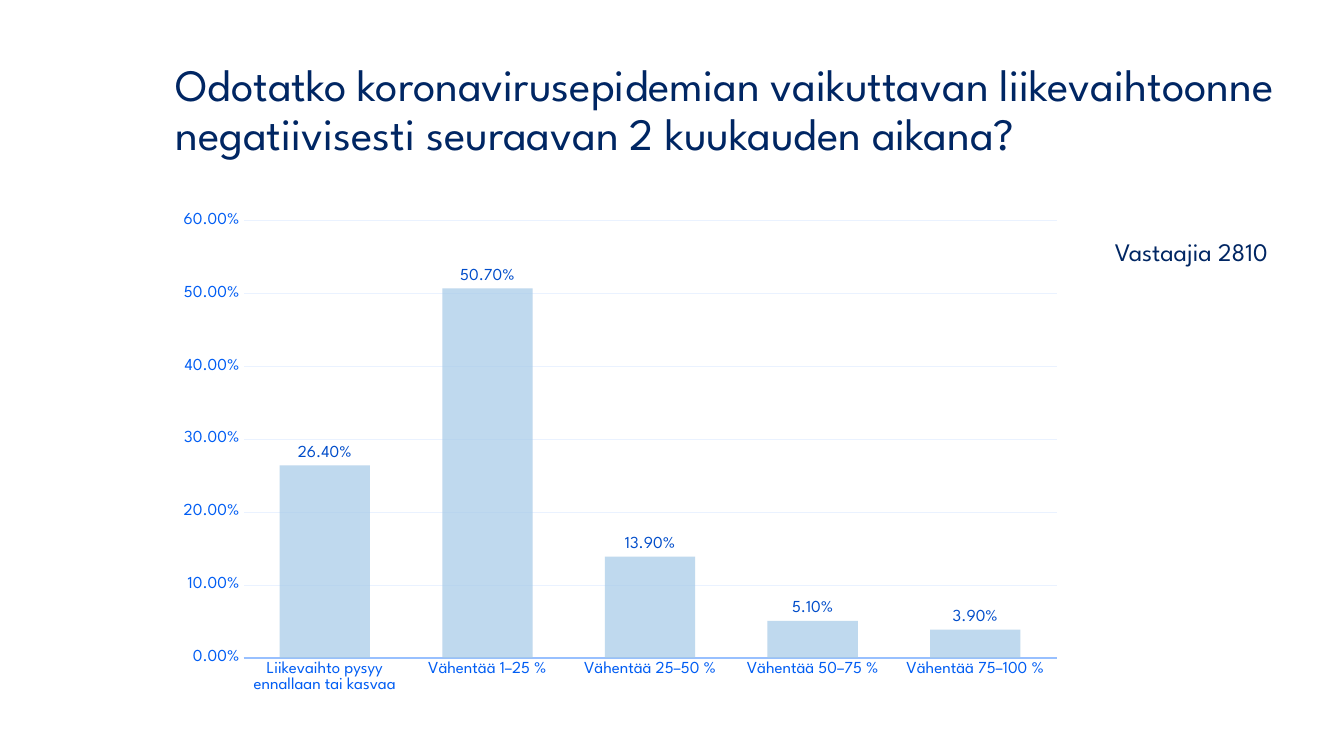
import pptx
import pptx.chart.data
import pptx.dml.color
import pptx.enum.chart
import pptx.enum.text
import pptx.oxml
import pptx.oxml.ns
import pptx.util
from dataclasses import dataclass

# Content
TITLE = "Odotatko koronavirusepidemian vaikuttavan liikevaihtoonne negatiivisesti seuraavan 2 kuukauden aikana?"
RESPONDENTS = "Vastaajia 2810"
REVENUE_EFFECTS = [
    ("Liikevaihto pysyy ennallaan tai kasvaa", 0.264),
    ("Vähentää 1–25 %", 0.507),
    ("Vähentää 25–50 %", 0.139),
    ("Vähentää 50–75 %", 0.051),
    ("Vähentää 75–100 %", 0.039),
]
PERCENT = "0.00%"


@dataclass(frozen=True)
class Theme:
    font: str = "League Spartan"
    text: str = "002663"
    axis_text: str = "005DF3"
    label_text: str = "004DCA"
    bar: str = "A5C9E7"
    bar_opacity: int = 70
    axis_line: str = "98C0FF"
    grid: str = "EAF2FF"
    title_size: int = 32
    note_size: int = 18
    chart_size: int = 12


THEME = Theme()
Inches = pptx.util.Inches


def color(value):
    return pptx.dml.color.RGBColor.from_string(value)


def style_font(font, size, text_color):
    font.name = THEME.font
    font.size = pptx.util.Pt(size)
    font.bold = False
    font.color.rgb = color(text_color)


def style_line(line, line_color, width):
    line.color.rgb = color(line_color)
    line.width = pptx.util.Pt(width)


def write_text(frame, text, size, text_color=THEME.text, spacing=1.0,
               anchor=pptx.enum.text.MSO_ANCHOR.TOP, wrap=True,
               auto_size=pptx.enum.text.MSO_AUTO_SIZE.NONE):
    frame.word_wrap = wrap
    frame.auto_size = auto_size
    frame.vertical_anchor = anchor
    paragraph = frame.paragraphs[0]
    paragraph.alignment = pptx.enum.text.PP_ALIGN.LEFT
    paragraph.line_spacing = spacing
    paragraph.space_before = pptx.util.Pt(0)
    run = paragraph.add_run()
    run.text = text
    style_font(run.font, size, text_color)


def add_effect_chart(slide):
    data = pptx.chart.data.CategoryChartData(number_format=PERCENT)
    data.categories = [name for name, share in REVENUE_EFFECTS]
    data.add_series("Series 1", [share for name, share in REVENUE_EFFECTS])
    chart = slide.shapes.add_chart(
        pptx.enum.chart.XL_CHART_TYPE.COLUMN_CLUSTERED,
        Inches(1.64), Inches(2.01), Inches(9.02), Inches(4.97), data).chart
    chart.has_legend = False
    chart.has_title = False
    style_font(chart.font, THEME.chart_size, THEME.text)

    # Axes
    for axis in (chart.category_axis, chart.value_axis):
        axis.major_tick_mark = pptx.enum.chart.XL_TICK_MARK.NONE
        axis.minor_tick_mark = pptx.enum.chart.XL_TICK_MARK.NONE
        style_font(axis.tick_labels.font, THEME.chart_size, THEME.axis_text)
    style_line(chart.category_axis.format.line, THEME.axis_line, 1.25)
    shares = chart.value_axis
    shares.minimum_scale, shares.maximum_scale, shares.major_unit = 0, 0.6, 0.1
    shares.format.line.fill.background()
    shares.has_major_gridlines = True
    style_line(shares.major_gridlines.format.line, THEME.grid, 0.75)
    shares.tick_labels.number_format = PERCENT
    shares.tick_labels.number_format_is_linked = False

    # Bars
    plot = chart.plots[0]
    plot.gap_width, plot.overlap = 80, 25
    plot.vary_by_categories = False
    series = plot.series[0]
    series.invert_if_negative = False
    fill = series.format.fill
    fill.solid()
    fill.fore_color.rgb = color(THEME.bar)
    bar_color = series.format.fill.fore_color
    solid = series._element.find(".//" + pptx.oxml.ns.qn("a:srgbClr"))
    alpha = pptx.oxml.parse_xml(
        f'<a:alpha {pptx.oxml.ns.nsdecls("a")} val="{THEME.bar_opacity * 1000}"/>')
    solid.append(alpha)

    # Value labels
    labels = series.data_labels
    labels.show_value = True
    labels.position = pptx.enum.chart.XL_LABEL_POSITION.OUTSIDE_END
    labels.number_format = PERCENT
    labels.number_format_is_linked = False
    style_font(labels.font, THEME.chart_size, THEME.label_text)


def main():
    presentation = pptx.Presentation()
    presentation.slide_width = Inches(13.33)
    presentation.slide_height = Inches(7.5)
    slide = presentation.slides.add_slide(presentation.slide_layouts[5])

    # Title
    title = slide.shapes.title
    title.left, title.top = Inches(1.64), Inches(0.38)
    title.width, title.height = Inches(11.35), Inches(1.45)
    write_text(title.text_frame, TITLE, THEME.title_size, spacing=0.9,
               anchor=pptx.enum.text.MSO_ANCHOR.MIDDLE)

    add_effect_chart(slide)

    # Number of respondents
    note = slide.shapes.add_textbox(Inches(10.96), Inches(2.3), Inches(1.98), Inches(0.4))
    write_text(note.text_frame, RESPONDENTS, THEME.note_size, wrap=False,
               auto_size=pptx.enum.text.MSO_AUTO_SIZE.SHAPE_TO_FIT_TEXT)

    presentation.save("out.pptx")


if __name__ == "__main__":
    main()
